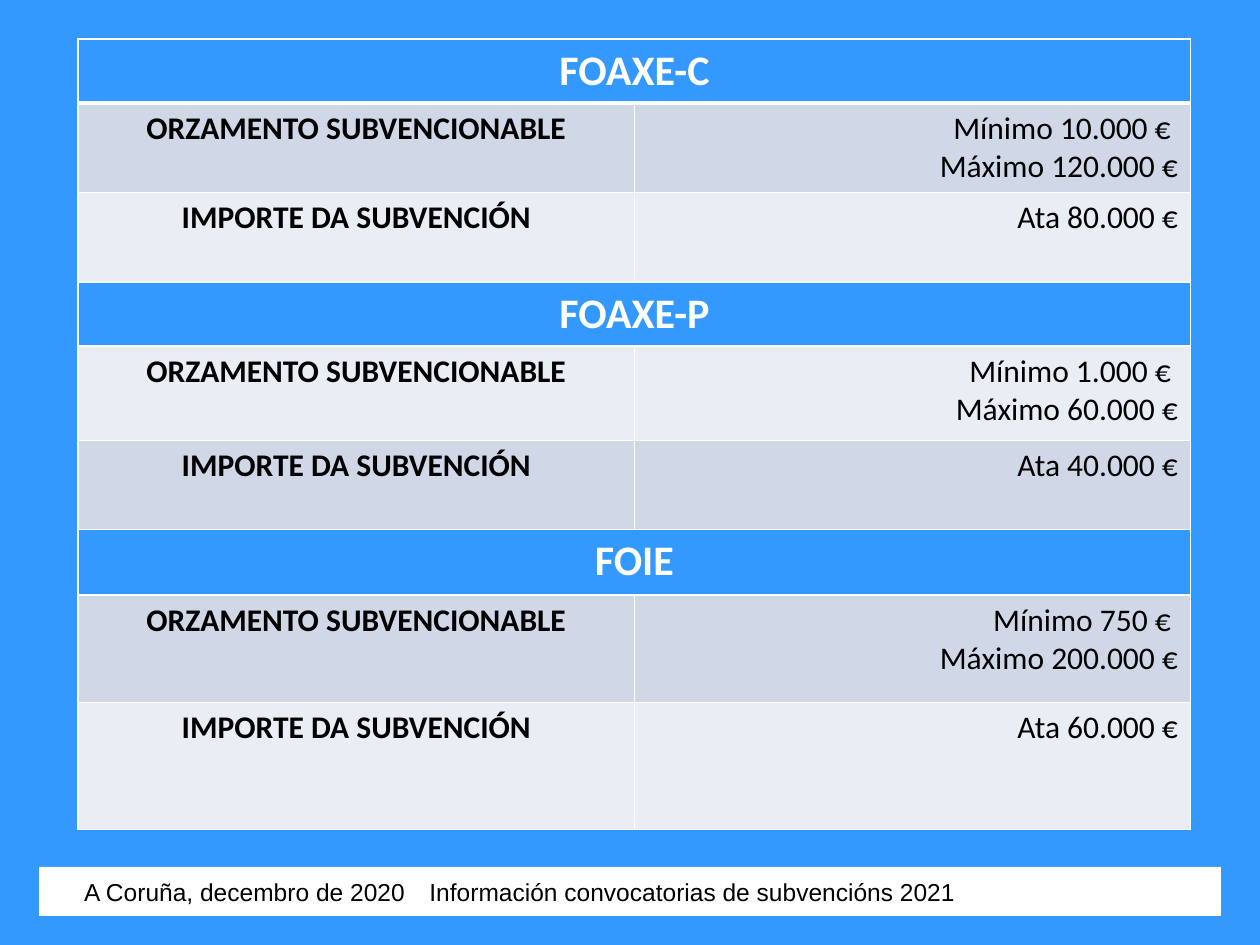
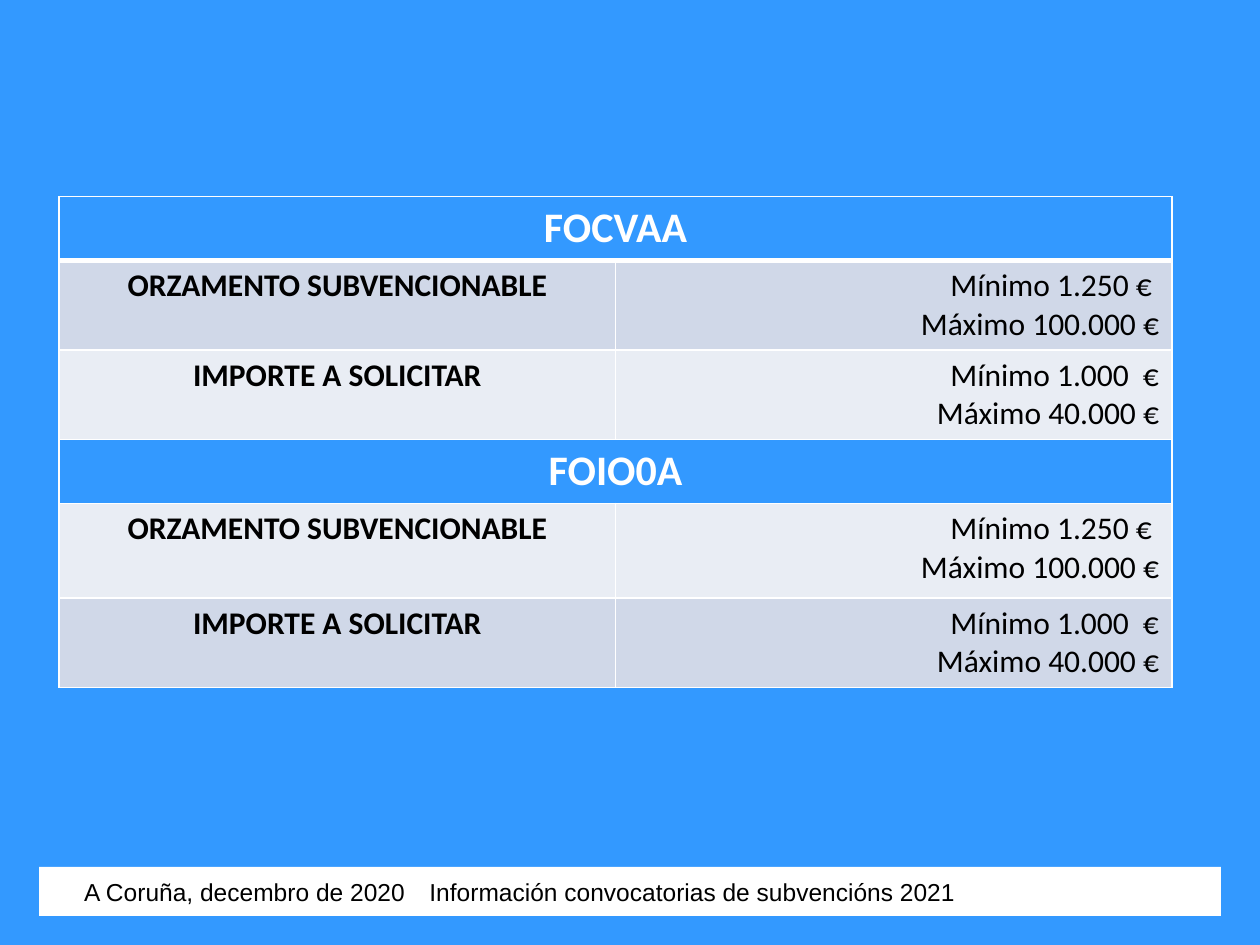
from dataclasses import dataclass

from lxml import etree
from pptx import Presentation, util as u
from pptx.dml.color import RGBColor
from pptx.enum import shapes, text
from pptx.oxml import ns

BUDGET = "ORZAMENTO SUBVENCIONABLE"
GRANT = "IMPORTE DA SUBVENCIÓN"
REQUEST = "IMPORTE A SOLICITAR"

# Each programme: name, heading height, then rows of label, amounts and height.
GRANT_SLIDES = [
    {"left": 0.62, "top": 0.31, "programmes": [
        ("FOAXE-C", 0.43, [
            (BUDGET, ["Mínimo 10.000 € ", "Máximo 120.000 €"], 0.71),
            (GRANT, ["Ata 80.000 €"], 0.71)]),
        ("FOAXE-P", 0.41, [
            (BUDGET, ["Mínimo 1.000 € ", "Máximo 60.000 €"], 0.75),
            (GRANT, ["Ata 40.000 €"], 0.71)]),
        ("FOIE", 0.52, [
            (BUDGET, ["Mínimo 750 € ", "Máximo 200.000 €"], 0.85),
            (GRANT, ["Ata 60.000 €"], 1.01)]),
    ]},
    {"left": 0.47, "top": 1.56, "programmes": [
        ("FOCVAA", 0.43, [
            (BUDGET, ["Mínimo 1.250 € ", "Máximo 100.000 €"], 0.71),
            (REQUEST, ["Mínimo 1.000  €", "Máximo 40.000 €"], 0.71)]),
        ("FOIO0A", 0.41, [
            (BUDGET, ["Mínimo 1.250 € ", "Máximo 100.000 €"], 0.75),
            (REQUEST, ["Mínimo 1.000  €", "Máximo 40.000 €"], 0.71)]),
    ]},
]
FOOTER = ("A Coruña, decembro de 2020", "Información convocatorias de subvencións 2021")
FOOTER_BOX = (0.31, 6.88, 9.38, 0.39)
FOOTER_INDENT, FOOTER_TAB = 0.26, 5.02
TABLE_WIDTH = 8.83


@dataclass(frozen=True)
class Theme:
    blue: str = "3399FF"
    white: str = "FFFFFF"
    black: str = "000000"
    bands: tuple = ("E9EDF4", "D0D8E8")
    rule: float = 1
    heading_rule: float = 3


THEME = Theme()
HEADING = {"name": "Calibri", "size": u.Pt(24), "bold": True, "color": THEME.white}
LABEL = {"name": "Calibri", "size": u.Pt(18), "bold": True, "color": THEME.black}
AMOUNT = {**LABEL, "bold": False}
FOOTER_FONT = {"name": "Arial", "size": u.Pt(14), "bold": False, "color": THEME.black}
CENTER, RIGHT, LEFT = (text.PP_ALIGN.CENTER, text.PP_ALIGN.RIGHT, text.PP_ALIGN.LEFT)


def paint(fill, color):
    fill.solid()
    fill.fore_color.rgb = RGBColor.from_string(color)


def write(frame, lines, style, align):
    """Put one line in each paragraph, all in the same style."""
    for index, line in enumerate(lines):
        para = frame.add_paragraph() if index else frame.paragraphs[0]
        para.alignment = align
        span = para.add_run()
        span.text = line
        for key, value in style.items():
            if key == "color":
                span.font.color.rgb = RGBColor.from_string(value)
            else:
                setattr(span.font, key, value)


def set_borders(cell, top, bottom):
    """Draw white rules on all sides; top and bottom are widths in points."""
    widths = {"lnL": THEME.rule, "lnR": THEME.rule, "lnT": top, "lnB": bottom}
    properties = cell._tc.get_or_add_tcPr()
    for place, (side, width) in enumerate(widths.items()):
        line = etree.Element(ns.qn("a:" + side), w=str(u.Pt(width)))
        fill = etree.SubElement(line, ns.qn("a:solidFill"))
        etree.SubElement(fill, ns.qn("a:srgbClr"), val=THEME.white)
        properties.insert(place, line)


def flatten(programmes):
    """List the table rows as (height, cells), a heading having one cell."""
    for name, height, entries in programmes:
        yield height, [([name], HEADING, CENTER)]
        for label, amounts, row_height in entries:
            yield row_height, [([label], LABEL, CENTER), (amounts, AMOUNT, RIGHT)]


def add_grant_table(page, left, top, programmes):
    rows = list(flatten(programmes))
    height = sum(row_height for row_height, _ in rows)
    frame = page.shapes.add_table(len(rows), 2, u.Inches(left), u.Inches(top),
                                  u.Inches(TABLE_WIDTH), u.Inches(height))
    table = frame.table
    table.first_row = table.horz_banding = False
    for index, (row_height, cells) in enumerate(rows):
        table.rows[index].height = u.Inches(row_height)
        is_heading = len(cells) == 1
        for column in range(2):
            cell = table.cell(index, column)
            paint(cell.fill, THEME.blue if is_heading else THEME.bands[index % 2])
            set_borders(cell,
                        top=THEME.heading_rule if index == 1 else THEME.rule,
                        bottom=THEME.heading_rule if index == 0 else THEME.rule)
        for column, content in enumerate(cells):
            write(table.cell(index, column).text_frame, *content)
        if is_heading:
            table.cell(index, 0).merge(table.cell(index, 1))


def add_footer(page):
    box = page.shapes.add_shape(shapes.MSO_SHAPE.RECTANGLE, *map(u.Inches, FOOTER_BOX))
    box.shadow.inherit = False
    paint(box.fill, THEME.white)
    box.line.fill.background()
    frame = box.text_frame
    frame.word_wrap = True
    frame.vertical_anchor = text.MSO_ANCHOR.MIDDLE
    frame.margin_right = u.Inches(0.2)
    write(frame, ["\t".join(FOOTER)], FOOTER_FONT, LEFT)
    properties = frame.paragraphs[0]._p.get_or_add_pPr()
    properties.set("marL", "0")
    properties.set("indent", str(u.Inches(FOOTER_INDENT)))
    tabs = etree.SubElement(properties, ns.qn("a:tabLst"))
    etree.SubElement(tabs, ns.qn("a:tab"), pos=str(u.Inches(FOOTER_TAB)), algn="l")


def main():
    deck = Presentation()
    deck.slide_width, deck.slide_height = u.Inches(10), u.Inches(7.5)
    for content in GRANT_SLIDES:
        page = deck.slides.add_slide(deck.slide_layouts[6])
        paint(page.background.fill, THEME.blue)
        add_grant_table(page, **content)
        add_footer(page)
    deck.save("out.pptx")


if __name__ == "__main__":
    main()
